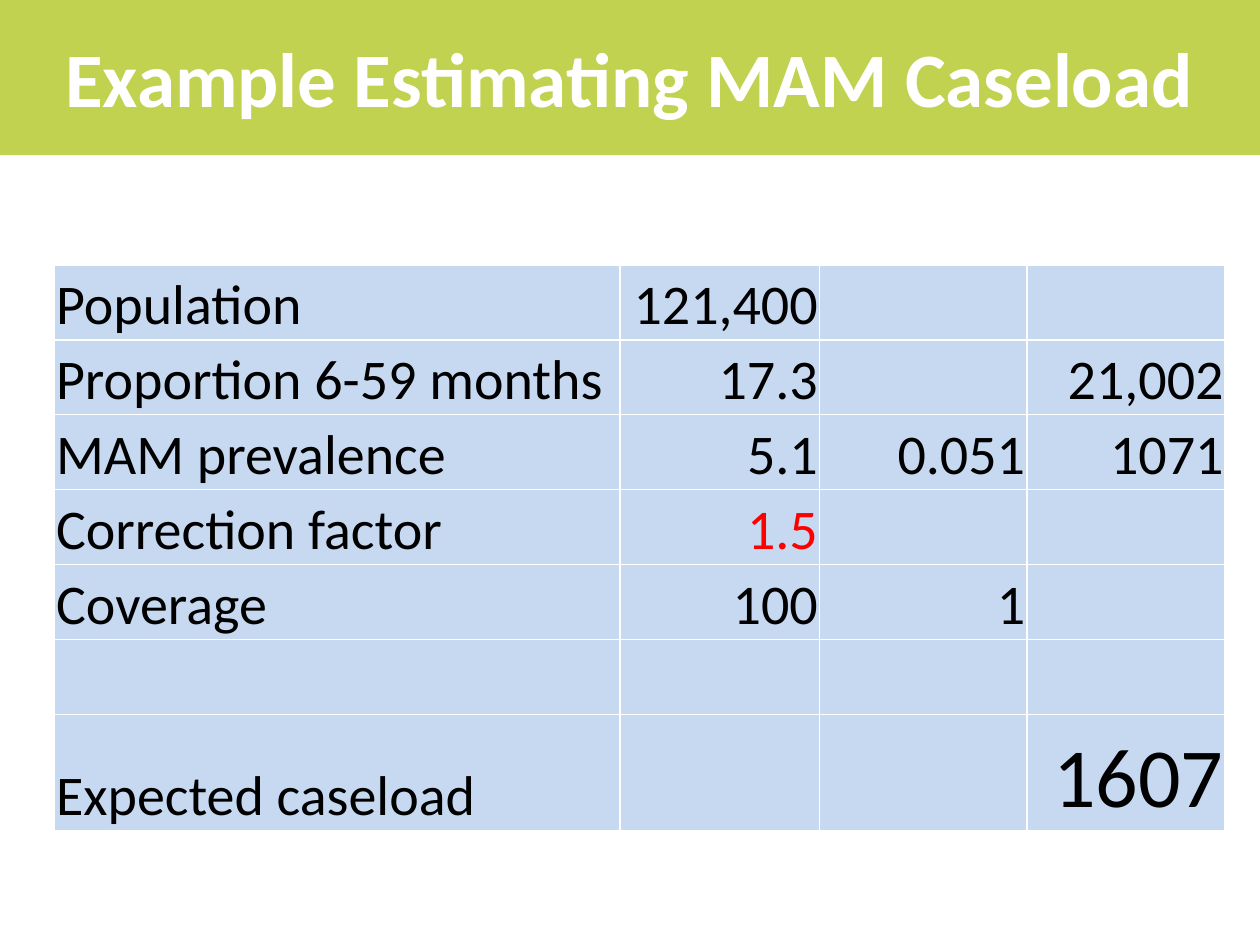
"""Build the slide that estimates a MAM caseload."""
from dataclasses import dataclass

from lxml import etree
from pptx import Presentation
from pptx import table as tb
from pptx.dml.color import RGBColor
from pptx.enum import shapes, text
from pptx.oxml import ns
from pptx.util import Cm, Pt

GREEN = RGBColor(0xC1, 0xD1, 0x50)
PALE_BLUE = RGBColor(0xC6, 0xD9, 0xF1)
WHITE = RGBColor(0xFF, 0xFF, 0xFF)
BLACK = RGBColor(0x00, 0x00, 0x00)
RED = RGBColor(0xFF, 0x00, 0x00)
FONT = "Calibri"
BAND = (Cm(0), Cm(-0.05), Cm(25.4), Cm(3.18))
COLUMN_WIDTHS = (11.4, 4.02, 4.18, 4)
ROW_HEIGHT = 1.51
RESULT_HEIGHT = 2.34


@dataclass(frozen=True)
class Entry:
    wording: str = ""
    size: int = 32
    color: RGBColor = BLACK


ROWS = (
    (Entry("Population"), Entry("121,400"), Entry(), Entry()),
    (Entry("Proportion 6-59 months"), Entry("17.3"), Entry(), Entry("21,002")),
    (Entry("MAM prevalence"), Entry("5.1"), Entry("0.051"), Entry("1071")),
    (Entry("Correction factor"), Entry("1.5", color=RED), Entry(), Entry()),
    (Entry("Coverage"), Entry("100"), Entry("1"), Entry()),
    (Entry(), Entry(), Entry(), Entry()),
    (Entry("Expected caseload"), Entry(), Entry(), Entry("1607", size=48)),
)


def add_borders(cell: tb._Cell) -> None:
    properties = cell._tc.get_or_add_tcPr()
    for index, side in enumerate(("lnL", "lnR", "lnT", "lnB")):
        line = etree.Element(ns.qn(f"a:{side}"), w=str(Pt(1)))
        fill = etree.SubElement(line, ns.qn("a:solidFill"))
        etree.SubElement(fill, ns.qn("a:srgbClr"), val=str(WHITE))
        properties.insert(index, line)


def fill_cell(cell: tb._Cell, entry: Entry, alignment: text.PP_ALIGN) -> None:
    cell.fill.solid()
    cell.fill.fore_color.rgb = PALE_BLUE
    cell.vertical_anchor = text.MSO_ANCHOR.BOTTOM
    cell.margin_left = cell.margin_right = cell.margin_top = Cm(0.03)
    cell.margin_bottom = Cm(0)
    add_borders(cell)
    cell.text_frame.text = entry.wording
    paragraph = cell.text_frame.paragraphs[0]
    paragraph.alignment = alignment
    for run in paragraph.runs:
        run.font.name = FONT
        run.font.size = Pt(entry.size)
        run.font.color.rgb = entry.color


def add_title(slide) -> None:
    title = slide.shapes.title
    title.left, title.top, title.width, title.height = BAND
    frame = title.text_frame
    frame.text = "Example Estimating MAM Caseload"
    frame.vertical_anchor = text.MSO_ANCHOR.MIDDLE
    paragraph = frame.paragraphs[0]
    paragraph.alignment = text.PP_ALIGN.CENTER
    font = paragraph.runs[0].font
    font.name, font.size, font.bold = FONT, Pt(44), True
    font.color.rgb = WHITE

    band = slide.shapes.add_shape(shapes.MSO_SHAPE.RECTANGLE, *BAND)
    band.shadow.inherit = False
    band.fill.solid()
    band.fill.fore_color.rgb = GREEN
    band.line.fill.background()
    title.element.addprevious(band.element)


def add_caseload_table(slide) -> None:
    heights = [ROW_HEIGHT] * (len(ROWS) - 1) + [RESULT_HEIGHT]
    table = slide.shapes.add_table(
        len(ROWS), len(COLUMN_WIDTHS), Cm(1.1), Cm(5.34),
        Cm(sum(COLUMN_WIDTHS)), Cm(sum(heights))).table
    table.first_row = table.horz_banding = False
    for column, width in zip(table.columns, COLUMN_WIDTHS):
        column.width = Cm(width)
    for row, height, entries in zip(table.rows, heights, ROWS):
        row.height = Cm(height)
        for index, (cell, entry) in enumerate(zip(row.cells, entries)):
            fill_cell(cell, entry, text.PP_ALIGN.RIGHT if index else text.PP_ALIGN.LEFT)


def main() -> None:
    presentation = Presentation()
    presentation.slide_width, presentation.slide_height = Cm(25.4), Cm(19.05)
    slide = presentation.slides.add_slide(presentation.slide_layouts[5])
    add_title(slide)
    add_caseload_table(slide)
    presentation.save("out.pptx")


if __name__ == "__main__":
    main()
